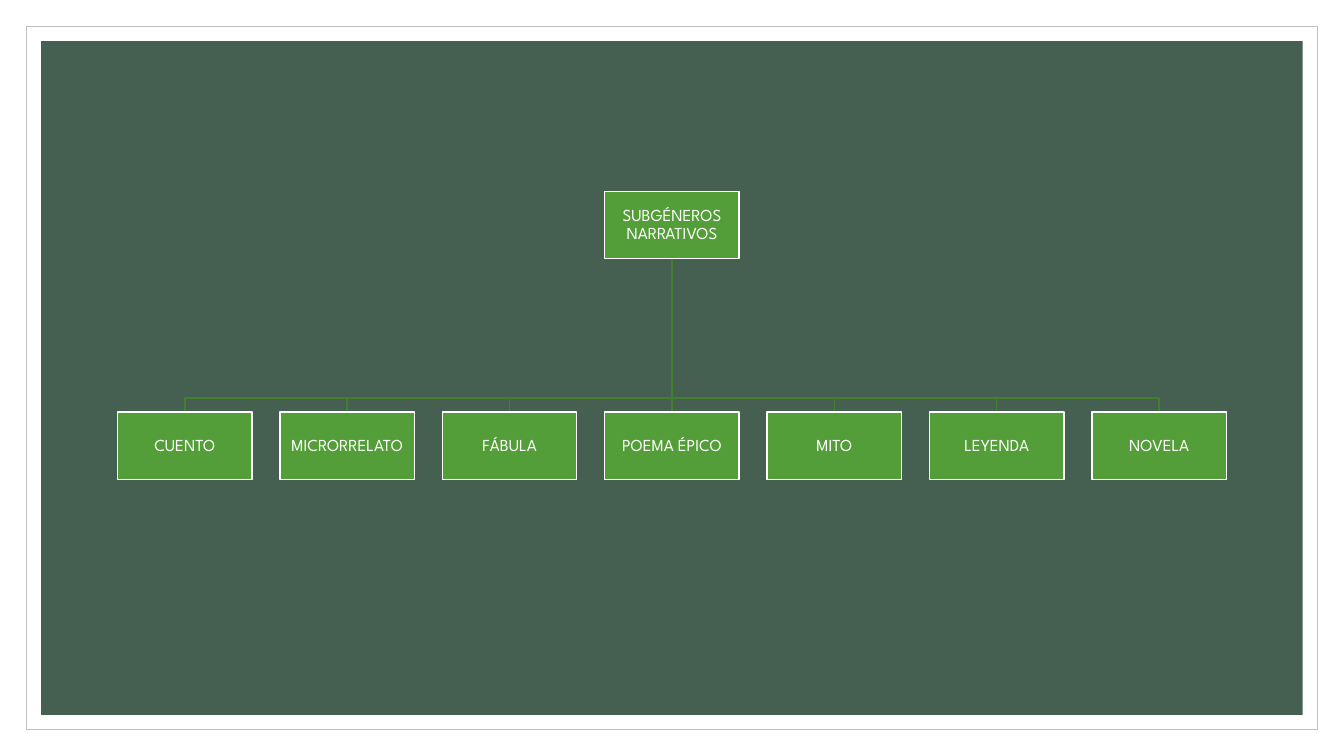
from lxml.etree import SubElement
from pptx import Presentation
from pptx.dml.color import RGBColor
from pptx.enum.shapes import MSO_CONNECTOR, MSO_SHAPE
from pptx.enum.text import MSO_ANCHOR, PP_ALIGN
from pptx.oxml.ns import qn
from pptx.util import Pt

SUBGENRES = ["CUENTO", "MICRORRELATO", "FÁBULA", "POEMA ÉPICO", "MITO", "LEYENDA", "NOVELA"]
SLIDE_WIDTH, SLIDE_HEIGHT = 960, 540
CENTER = SLIDE_WIDTH / 2
BOX_WIDTH, BOX_HEIGHT = 96, 48
PITCH = 116
ROOT_TOP, BRANCH_Y, CHILD_TOP = 136.6, 284.4, 294.4
ROOT_BOTTOM = ROOT_TOP + BOX_HEIGHT


def color(value):
    return RGBColor.from_string(value)


class Diagram:
    font = "League Spartan"
    font_size = 12
    white = "FFFFFF"
    box_fill = "549E39"
    branch_line = "437F2E"

    def __init__(self, slide):
        self.slide = slide

    def outline(self, shape, line, width):
        shape.line.color.rgb = color(line)
        shape.line.width = Pt(width)

    def rectangle(self, left, top, width, height, fill, line=None, line_width=1):
        shape = self.slide.shapes.add_shape(
            MSO_SHAPE.RECTANGLE, Pt(left), Pt(top), Pt(width), Pt(height))
        shape.shadow.inherit = False
        shape.fill.solid()
        shape.fill.fore_color.rgb = color(fill)
        if line:
            self.outline(shape, line, line_width)
        else:
            shape.line.fill.background()
        return shape

    def frame(self, margin, fill, line=None, line_width=1):
        return self.rectangle(margin, margin, SLIDE_WIDTH - 2 * margin,
                              SLIDE_HEIGHT - 2 * margin, fill, line, line_width)

    def box(self, center, top, text):
        shape = self.rectangle(center - BOX_WIDTH / 2, top, BOX_WIDTH, BOX_HEIGHT,
                               self.box_fill, self.white)
        text_frame = shape.text_frame
        text_frame.word_wrap = True
        text_frame.vertical_anchor = MSO_ANCHOR.MIDDLE
        text_frame.margin_left = text_frame.margin_right = Pt(0.6)
        text_frame.margin_top = text_frame.margin_bottom = Pt(0.6)
        paragraph = text_frame.paragraphs[0]
        paragraph.alignment = PP_ALIGN.CENTER
        paragraph.line_spacing = 0.9
        run = paragraph.add_run()
        run.text = text
        run.font.name = self.font
        run.font.size = Pt(self.font_size)
        run.font.color.rgb = color(self.white)
        return shape

    def elbow(self, center):
        builder = self.slide.shapes.build_freeform(Pt(CENTER), Pt(ROOT_BOTTOM))
        corners = [(CENTER, BRANCH_Y), (center, BRANCH_Y), (center, CHILD_TOP)]
        builder.add_line_segments([(Pt(x), Pt(y)) for x, y in corners], close=False)
        shape = builder.convert_to_shape()
        shape.shadow.inherit = False
        shape.fill.background()
        self.outline(shape, self.branch_line, 1)
        return shape

    def stem(self):
        connector = self.slide.shapes.add_connector(
            MSO_CONNECTOR.STRAIGHT, Pt(CENTER), Pt(ROOT_BOTTOM), Pt(CENTER), Pt(CHILD_TOP))
        self.outline(connector, self.branch_line, 1)
        SubElement(connector.element.spPr, qn("a:effectLst"))
        return connector


def main():
    presentation = Presentation()
    presentation.slide_width = Pt(SLIDE_WIDTH)
    presentation.slide_height = Pt(SLIDE_HEIGHT)
    diagram = Diagram(presentation.slides.add_slide(presentation.slide_layouts[6]))

    diagram.frame(18.72, "FFFFFF", "BFBFBF", 0.5)
    diagram.frame(29.4, "455F51")

    middle = len(SUBGENRES) // 2
    centers = [CENTER + (index - middle) * PITCH for index in range(len(SUBGENRES))]
    for center in centers:
        if center != CENTER:
            diagram.elbow(center)
    stem = diagram.stem()

    root = diagram.box(CENTER, ROOT_TOP, "SUBGÉNEROS NARRATIVOS")
    children = [diagram.box(center, CHILD_TOP, name)
                for center, name in zip(centers, SUBGENRES)]
    stem.begin_connect(root, 2)
    stem.end_connect(children[middle], 0)

    presentation.save("out.pptx")


if __name__ == "__main__":
    main()
